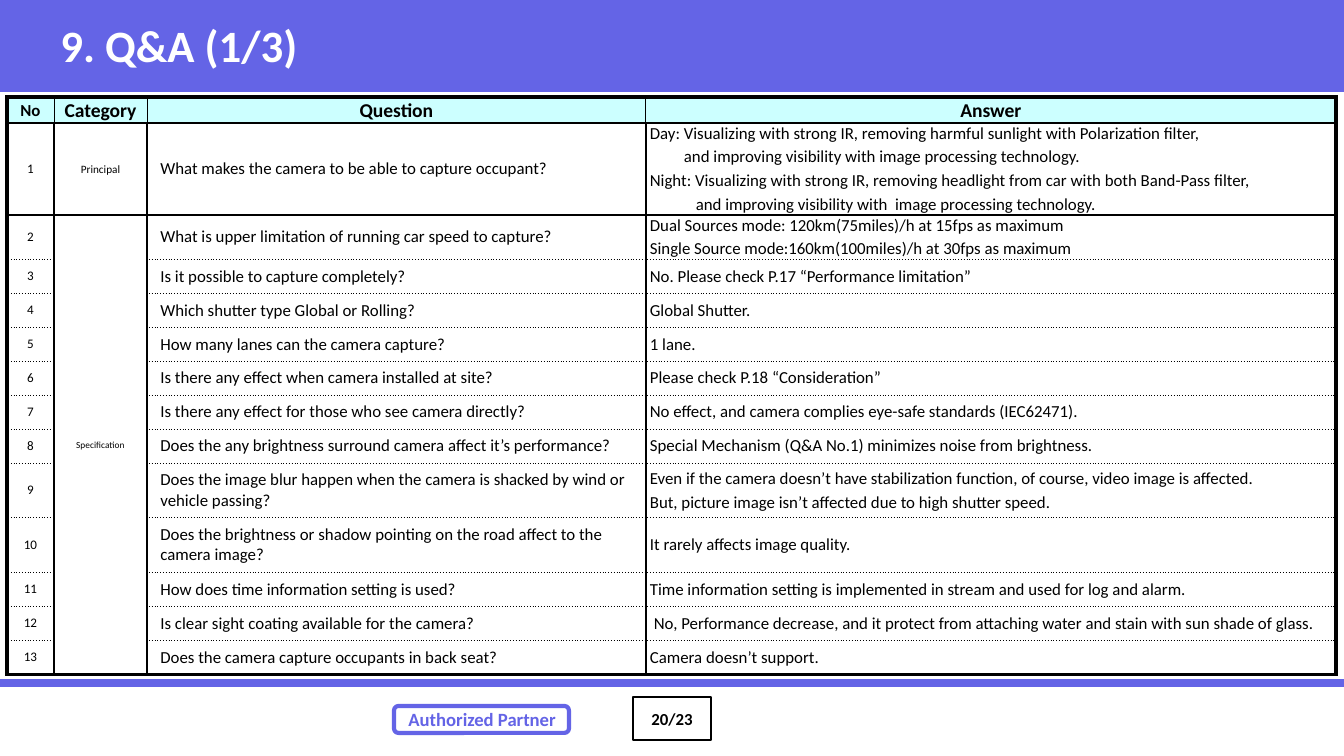
from lxml import etree
from pptx import Presentation
from pptx.dml.color import RGBColor
from pptx.enum.shapes import MSO_CONNECTOR, MSO_SHAPE
from pptx.enum.text import MSO_ANCHOR, MSO_AUTO_SIZE, PP_ALIGN
from pptx.oxml.ns import qn
from pptx.util import Pt

EMU_PER_PX = 914400 / 134.4
FONT = "Calibri"
VIOLET = RGBColor(0x64, 0x64, 0xE6)
CYAN = RGBColor(0xCC, 0xFF, 0xFF)
WHITE = RGBColor(0xFF, 0xFF, 0xFF)
BLACK = RGBColor(0x00, 0x00, 0x00)
LEFT, CENTER = PP_ALIGN.LEFT, PP_ALIGN.CENTER
MIDDLE = MSO_ANCHOR.MIDDLE
RECTANGLE, ROUNDED = MSO_SHAPE.RECTANGLE, MSO_SHAPE.ROUNDED_RECTANGLE
STRAIGHT = MSO_CONNECTOR.STRAIGHT
NO_AUTOFIT = MSO_AUTO_SIZE.NONE

COLUMN_WIDTHS = [47, 93, 499, 690]
ROW_HEIGHTS = [25, 92, 44] + [34] * 6 + [54, 55] + [34] * 3
HEADERS = [("No", 9), ("Category", 10.5), ("Question", 10.5), ("Answer", 10.5)]
ANSWER_MARGIN = 4
THICK, THIN, HAIR, DOTTED = (2.25, "solid"), (1, "solid"), (0.5, "solid"), (0.5, "sysDot")

# Each answer line is an indent in px and its text.
QUESTIONS = [
    ("What makes the camera to be able to capture occupant?", [
        (0, "Day: Visualizing with strong IR, removing harmful sunlight with Polarization filter,"),
        (34, "and improving visibility with image processing technology."),
        (0, "Night: Visualizing with strong IR, removing headlight from car with both Band-Pass filter,"),
        (46, "and improving visibility with  image processing technology.")]),
    ("What is upper limitation of running car speed to capture?", [
        (0, "Dual Sources mode: 120km(75miles)/h at 15fps as maximum"),
        (0, "Single Source mode:160km(100miles)/h at 30fps as maximum")]),
    ("Is it possible to capture completely?", [
        (0, "No. Please check P.17 “Performance limitation”")]),
    ("Which shutter type Global or Rolling?", [(0, "Global Shutter.")]),
    ("How many lanes can the camera capture?", [(0, "1 lane.")]),
    ("Is there any effect when camera installed at site?", [
        (0, "Please check P.18 “Consideration”")]),
    ("Is there any effect for those who see camera directly?", [
        (0, "No effect, and camera complies eye-safe standards (IEC62471).")]),
    ("Does the any brightness surround camera affect it’s performance?", [
        (0, "Special Mechanism (Q&A No.1) minimizes noise from brightness.")]),
    ("Does the image blur happen when the camera is shacked by wind or vehicle passing?", [
        (0, "Even if the camera doesn’t have stabilization function, of course, video image is affected."),
        (0, "But, picture image isn’t affected due to high shutter speed.")]),
    ("Does the brightness or shadow pointing on the road affect to the camera image?", [
        (0, "It rarely affects image quality.")]),
    ("How does time information setting is used?", [
        (0, "Time information setting is implemented in stream and used for log and alarm.")]),
    ("Is clear sight coating available for the camera?", [
        (4, "No, Performance decrease, and it protect from attaching water and stain with sun shade of glass.")]),
    ("Does the camera capture occupants in back seat?", [(0, "Camera doesn’t support.")]),
]


def px(length):
    return round(length * EMU_PER_PX)


def write(paragraph, text, size, color=BLACK, bold=False, align=LEFT):
    paragraph.text = text
    paragraph.alignment = align
    font = paragraph.font
    font.name, font.size, font.bold = FONT, Pt(size), bold
    font.color.rgb = color


def set_margins(holder, left, top, right, bottom):
    holder.margin_left, holder.margin_top = px(left), px(top)
    holder.margin_right, holder.margin_bottom = px(right), px(bottom)


def add_box(page, kind, left, top, width, height, fill=None, line=None, line_width=1):
    box = page.shapes.add_shape(kind, px(left), px(top), px(width), px(height))
    box.shadow.inherit = False
    if fill is None:
        box.fill.background()
    else:
        box.fill.solid()
        box.fill.fore_color.rgb = fill
    if line is None:
        box.line.fill.background()
    else:
        box.line.color.rgb = line
        box.line.width = Pt(line_width)
    box.text_frame.vertical_anchor = MIDDLE
    return box


def add_rule(page, top):
    rule = page.shapes.add_connector(STRAIGHT, 0, px(top), px(1344), px(top))
    rule.line.color.rgb = VIOLET
    rule.line.width = Pt(4.5)
    etree.SubElement(rule._element.spPr, qn("a:effectLst"))


def add_footer(page):
    add_rule(page, 683)
    number = add_box(page, RECTANGLE, 633, 697, 78, 43, line=BLACK)
    set_margins(number.text_frame, 4, 4, 4, 4)
    write(number.text_frame.paragraphs[0], "20/23", 9, bold=True, align=CENTER)
    badge = add_box(page, ROUNDED, 394, 706, 175, 27, line=VIOLET, line_width=2.25)
    badge.text_frame.word_wrap = False
    write(badge.text_frame.paragraphs[0], "Authorized Partner", 10, VIOLET, bold=True)


def format_title(page, text):
    title = page.shapes.title
    title.left, title.top, title.width, title.height = px(47), px(9), px(1124), px(77)
    frame = title.text_frame
    frame.auto_size = NO_AUTOFIT
    frame.vertical_anchor = MIDDLE
    write(frame.paragraphs[0], text, 24, WHITE, bold=True)
    frame.paragraphs[0].line_spacing = 0.9
    page.shapes._spTree.append(title._element)


def horizontal_border(edge, column):
    if edge in (0, len(ROW_HEIGHTS)):
        return THICK
    if edge <= 2:
        return THIN
    return None if column == 1 else DOTTED


def vertical_border(edge, row):
    if edge in (0, len(COLUMN_WIDTHS)):
        return THICK
    return HAIR if row == 0 else THIN


def set_borders(cell, row, column):
    properties = cell._tc.get_or_add_tcPr()
    sides = {"a:lnL": vertical_border(column, row),
             "a:lnR": vertical_border(column + 1, row),
             "a:lnT": horizontal_border(row, column),
             "a:lnB": horizontal_border(row + 1, column)}
    if (row, column) == (2, 1):
        sides["a:lnB"] = THICK
    for tag, border in sides.items():
        line = etree.SubElement(properties, qn(tag))
        if border is None:
            etree.SubElement(line, qn("a:noFill"))
            continue
        width, dash = border
        line.set("w", str(Pt(width)))
        solid = etree.SubElement(line, qn("a:solidFill"))
        etree.SubElement(solid, qn("a:srgbClr"), val=str(BLACK))
        etree.SubElement(line, qn("a:prstDash"), val=dash)


def write_cell(cell, text, size, align=LEFT, bold=False):
    write(cell.text_frame.paragraphs[0], text, size, bold=bold, align=align)


def write_answer(cell, lines):
    set_margins(cell, ANSWER_MARGIN, 0, 0, 0)
    frame = cell.text_frame
    for index, (indent, text) in enumerate(lines):
        paragraph = frame.add_paragraph() if index else frame.paragraphs[0]
        write(paragraph, text, 9)
        if index:
            paragraph.space_before = Pt(1.8)
        if indent:
            paragraph._p.get_or_add_pPr().set("marL", str(px(indent)))


def add_question_table(page):
    frame = page.shapes.add_table(len(ROW_HEIGHTS), len(COLUMN_WIDTHS), px(7), px(97),
                                  px(sum(COLUMN_WIDTHS)), px(sum(ROW_HEIGHTS)))
    table = frame.table
    table.horz_banding = False
    for column, width in zip(table.columns, COLUMN_WIDTHS):
        column.width = px(width)
    for row, height in enumerate(ROW_HEIGHTS):
        table.rows[row].height = px(height)
        for column in range(len(COLUMN_WIDTHS)):
            cell = table.cell(row, column)
            cell.vertical_anchor = MIDDLE
            set_borders(cell, row, column)
            cell.fill.solid()
            cell.fill.fore_color.rgb = WHITE if row else CYAN
    for column, (text, size) in enumerate(HEADERS):
        cell = table.cell(0, column)
        set_margins(cell, 0, 0, 0, 0)
        write_cell(cell, text, size, CENTER, bold=True)
        cell.text_frame.paragraphs[0].line_spacing = 1.1
    table.cell(2, 1).merge(table.cell(len(QUESTIONS), 1))
    write_cell(table.cell(1, 1), "Principal", 6, CENTER)
    write_cell(table.cell(2, 1), "Specification", 5, CENTER)
    for number, (question, answer) in enumerate(QUESTIONS, 1):
        write_cell(table.cell(number, 0), str(number), 7, CENTER)
        write_cell(table.cell(number, 2), question, 9)
        write_answer(table.cell(number, 3), answer)


def main():
    deck = Presentation()
    deck.slide_width, deck.slide_height = px(1344), px(756)
    page = deck.slides.add_slide(deck.slide_layouts[5])
    add_box(page, RECTANGLE, 0, 0, 1344, 92, fill=VIOLET)
    add_footer(page)
    format_title(page, "9. Q&A (1/3)")
    add_question_table(page)
    deck.save("out.pptx")


if __name__ == "__main__":
    main()
